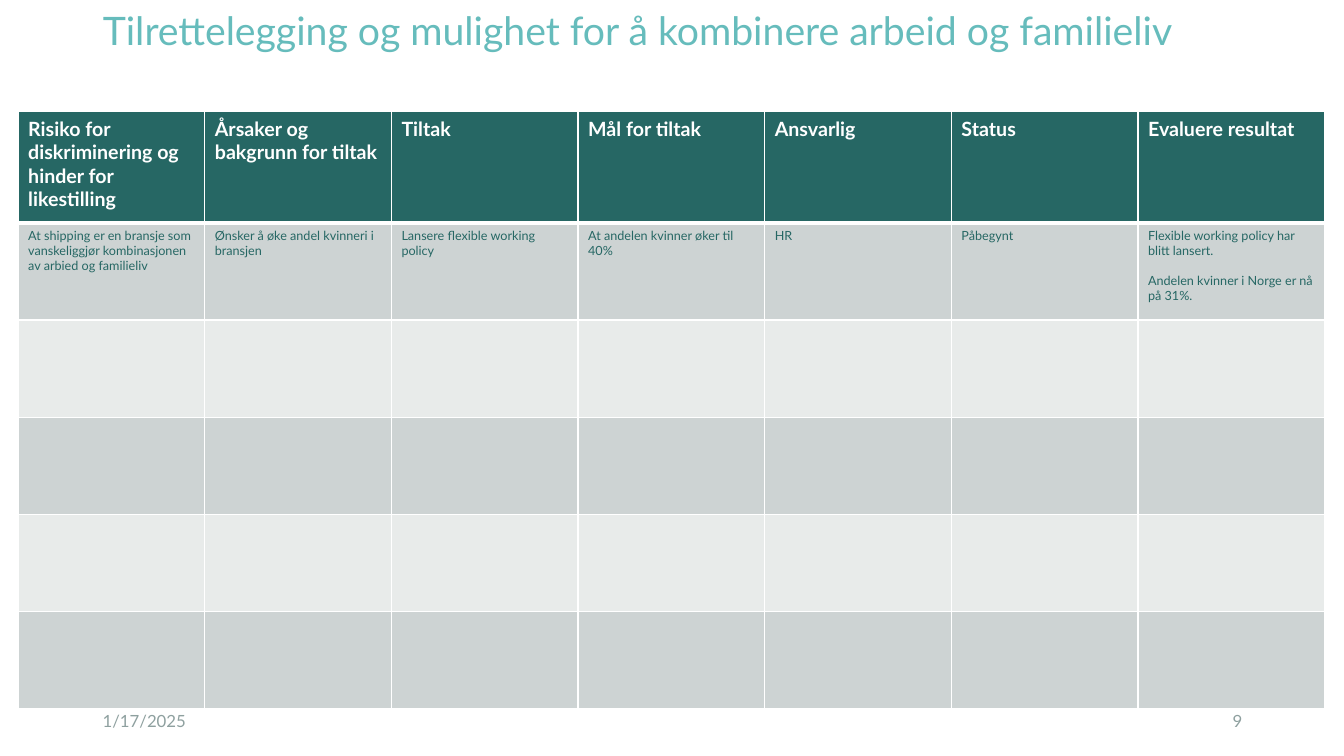
from dataclasses import dataclass

from lxml.etree import SubElement
from pptx import Presentation
from pptx.dml.color import RGBColor
from pptx.enum.text import MSO_ANCHOR as Anchor, MSO_AUTO_SIZE as Fit, PP_ALIGN as Align
from pptx.oxml.ns import qn
from pptx.slide import Slide
from pptx.table import _Cell as Cell
from pptx.util import Inches, Pt

FONT = "Lato"
TEAL = RGBColor(0x66, 0xBC, 0xBC)
DARK = RGBColor(0x26, 0x67, 0x64)
GREY = RGBColor(0x8E, 0xA0, 0x9F)
WHITE = RGBColor(0xFF, 0xFF, 0xFF)
BANDS = (RGBColor(0xCD, 0xD3, 0xD3), RGBColor(0xE8, 0xEB, 0xEA))

HEADS = ["Risiko for diskriminering og hinder for likestilling",
         "Årsaker og bakgrunn for tiltak", "Tiltak", "Mål for tiltak",
         "Ansvarlig", "Status", "Evaluere resultat"]
FACTS = ["At shipping er en bransje som vanskeliggjør kombinasjonen av arbied og familieliv",
         "Ønsker å øke andel kvinneri i bransjen", "Lansere flexible working policy",
         "At andelen kvinner øker til 40%", "HR", "Påbegynt",
         "Flexible working policy har blitt lansert.\nAndelen kvinner i Norge er nå på 31%."]
ROWS = [HEADS, FACTS] + [[""] * len(HEADS)] * 4
WIDTH, HEAD_H, ROW_H = 12.96, 1.1, 0.965


@dataclass
class Note:
    text: str
    left: float
    align: Align


NOTES = [Note("1/17/2025", 0.92, Align.LEFT), Note("9", 9.42, Align.RIGHT)]


def style(par, size: float, color: RGBColor, bold: bool = False) -> None:
    par.font.name = FONT
    par.font.size = Pt(size)
    par.font.bold = bold
    par.font.color.rgb = color


def add_note(slide: Slide, note: Note) -> None:
    box = slide.shapes.add_textbox(Inches(note.left), Inches(6.95), Inches(3), Inches(0.4))
    frame = box.text_frame
    frame.word_wrap = True
    frame.vertical_anchor = Anchor.MIDDLE
    par = frame.paragraphs[0]
    par.text = note.text
    par.alignment = note.align
    style(par, 12, GREY)


def add_edges(cell: Cell, top: float, bottom: float) -> None:
    props = cell._tc.get_or_add_tcPr()
    for side, width in (("L", 1), ("R", 1), ("T", top), ("B", bottom)):
        line = SubElement(props, qn(f"a:ln{side}"), w=str(Pt(width)))
        fill = SubElement(line, qn("a:solidFill"))
        SubElement(fill, qn("a:srgbClr"), val=str(WHITE))


def fill_cell(cell: Cell, row: int, text: str) -> None:
    head = row == 0
    add_edges(cell, 3 if row == 1 else 1, 3 if head else 1)
    cell.fill.solid()
    cell.fill.fore_color.rgb = DARK if head else BANDS[(row - 1) % 2]
    cell.text = text
    for i, par in enumerate(cell.text_frame.paragraphs):
        style(par, 14 if head else 9, WHITE if head else DARK, head)
        if i:
            par.space_before = Pt(10.8)


def add_grid(slide: Slide) -> None:
    height = HEAD_H + ROW_H * (len(ROWS) - 1)
    grid = slide.shapes.add_table(len(ROWS), len(HEADS), Inches(0.18), Inches(1.11),
                                  Inches(WIDTH), Inches(height)).table
    for col in grid.columns:
        col.width = Inches(WIDTH / len(HEADS))
    for r, texts in enumerate(ROWS):
        grid.rows[r].height = Inches(ROW_H if r else HEAD_H)
        for c, text in enumerate(texts):
            fill_cell(grid.cell(r, c), r, text)


def add_title(slide: Slide) -> None:
    title = slide.shapes.title
    title.left, title.top = Inches(0.92), Inches(0.05)
    title.width, title.height = Inches(11.5), Inches(0.55)
    frame = title.text_frame
    frame.text = "Tilrettelegging og mulighet for å kombinere arbeid og familieliv"
    frame.word_wrap = True
    frame.auto_size = Fit.NONE
    frame.vertical_anchor = Anchor.MIDDLE
    par = frame.paragraphs[0]
    par.alignment = Align.LEFT
    par.line_spacing = 0.9
    style(par, 28, TEAL)


def main() -> None:
    deck = Presentation()
    deck.slide_width, deck.slide_height = Inches(13.33), Inches(7.5)
    slide = deck.slides.add_slide(deck.slide_layouts[5])
    add_title(slide)
    # Date and slide number
    for note in NOTES:
        add_note(slide, note)
    # Table of measures
    add_grid(slide)
    deck.save("out.pptx")


if __name__ == "__main__":
    main()
